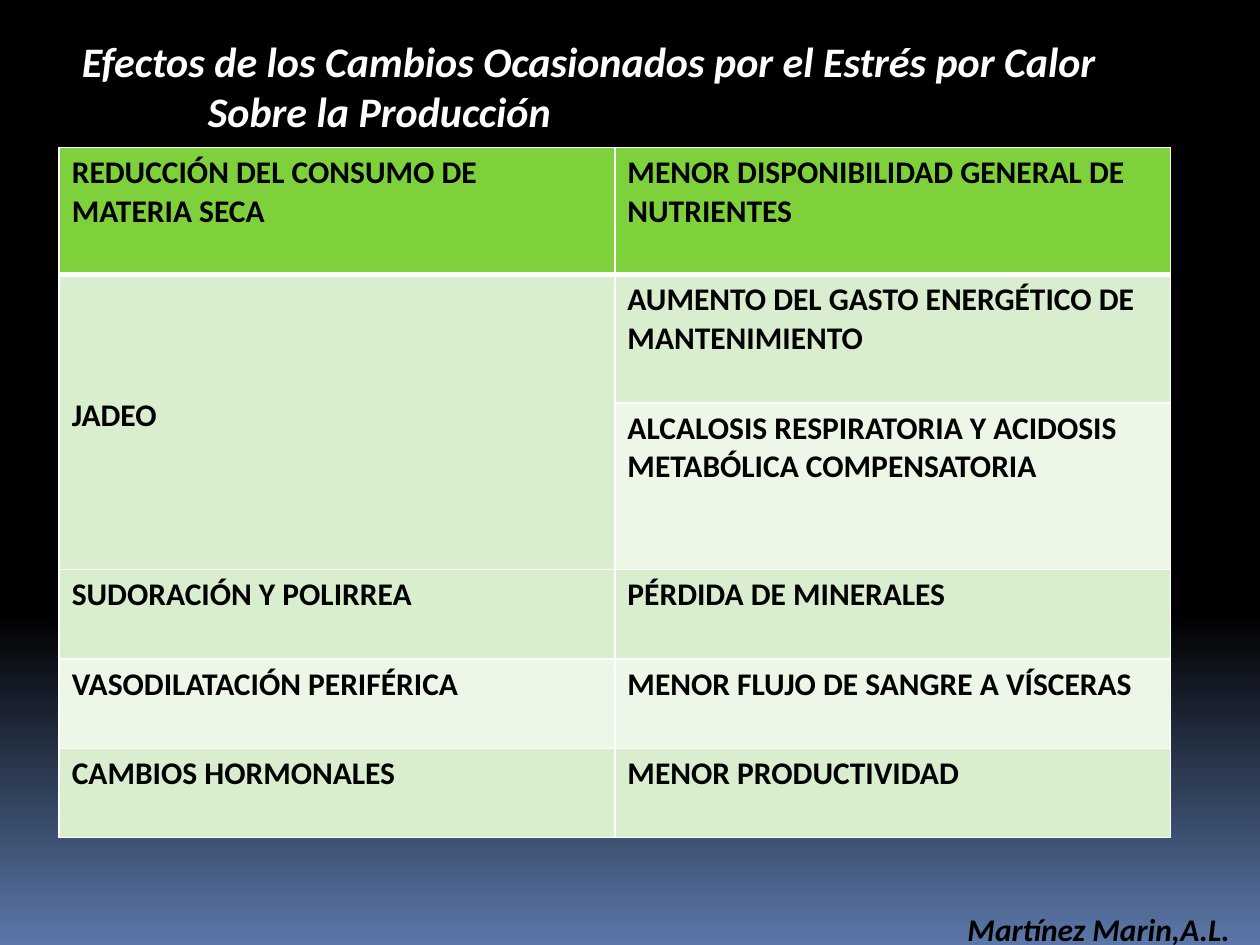
"""Build a slide with a table of heat stress effects on production."""
from copy import deepcopy

from lxml.etree import SubElement
from pptx import Presentation
from pptx.dml.color import RGBColor
from pptx.enum.text import MSO_ANCHOR, MSO_AUTO_SIZE, PP_ALIGN
from pptx.oxml.ns import qn
from pptx.util import Inches, Pt

BLACK = RGBColor(0x00, 0x00, 0x00)
WHITE = RGBColor(0xFF, 0xFF, 0xFF)
BLUE = RGBColor(0x5B, 0x77, 0xA8)
GREEN = RGBColor(0x7F, 0xD1, 0x3B)
LIGHT_GREEN = RGBColor(0xD8, 0xEE, 0xCE)
PALE_GREEN = RGBColor(0xEC, 0xF7, 0xE8)

ROWS = [
    (1.01, GREEN, "REDUCCIÓN DEL CONSUMO DE MATERIA SECA",
     "MENOR DISPONIBILIDAD GENERAL DE NUTRIENTES"),
    (1.02, LIGHT_GREEN, "JADEO", "AUMENTO DEL GASTO ENERGÉTICO DE MANTENIMIENTO"),
    (1.32, PALE_GREEN, "", "ALCALOSIS RESPIRATORIA Y ACIDOSIS METABÓLICA COMPENSATORIA"),
    (0.71, LIGHT_GREEN, "SUDORACIÓN Y POLIRREA", "PÉRDIDA DE MINERALES"),
    (0.71, PALE_GREEN, "VASODILATACIÓN PERIFÉRICA", "MENOR FLUJO DE SANGRE A VÍSCERAS"),
    (0.71, LIGHT_GREEN, "CAMBIOS HORMONALES", "MENOR PRODUCTIVIDAD"),
]


def format_text(paragraph, size, color, italic=False):
    values = {"name": "Calibri", "size": Pt(size), "bold": True, "italic": italic}
    for name, value in values.items():
        setattr(paragraph.font, name, value)
    paragraph.font.color.rgb = color


def set_borders(cell, bottom_width):
    properties = cell._tc.get_or_add_tcPr()
    widths = {"a:lnL": 1, "a:lnR": 1, "a:lnT": 1, "a:lnB": bottom_width}
    for position, (tag, width) in enumerate(widths.items()):
        line = SubElement(properties, qn(tag), w=str(Pt(width)))
        fill = SubElement(line, qn("a:solidFill"))
        SubElement(fill, qn("a:srgbClr"), val=str(WHITE))
        properties.insert(position, line)


presentation = Presentation()
presentation.slide_width = Inches(10)
presentation.slide_height = Inches(7.5)
slide = presentation.slides.add_slide(presentation.slide_layouts[5])

background = slide.background.fill
background.gradient()
background.gradient_angle = 270
stop_list = slide._element.find(".//" + qn("a:gsLst"))
stop_list.insert(1, deepcopy(stop_list[0]))
for stop, position, color in zip(background.gradient_stops, (0, 0.65, 1), (BLACK, BLACK, BLUE)):
    stop.position = position
    stop.color.rgb = color

table_shape = slide.shapes.add_table(
    len(ROWS), 2, Inches(0.47), Inches(1.17), Inches(8.83), Inches(5.48))
table = table_shape.table
for column in table.columns:
    column.width = Inches(4.41)
for row_index, (height, color, *texts) in enumerate(ROWS):
    table.rows[row_index].height = Inches(height)
    for column_index, text in enumerate(texts):
        cell = table.cell(row_index, column_index)
        cell.fill.solid()
        cell.fill.fore_color.rgb = color
        set_borders(cell, 3 if row_index == 0 else 1)
        cell.text = text
        format_text(cell.text_frame.paragraphs[0], 18, BLACK)
panting_cell = table.cell(1, 0)
panting_cell.merge(table.cell(2, 0))
panting_cell.margin_top = Inches(0.97)

title = slide.shapes.title
title_placement = {"left": 0.55, "top": 0.23, "width": 8.98, "height": 0.91}
for name, value in title_placement.items():
    setattr(title, name, Inches(value))
title.text_frame.text = "Efectos de los Cambios Ocasionados por el Estrés por Calor\vSobre la Producción"
title.text_frame.vertical_anchor = MSO_ANCHOR.TOP
title.text_frame.auto_size = MSO_AUTO_SIZE.NONE
title_paragraph = title.text_frame.paragraphs[0]
title_paragraph.alignment = PP_ALIGN.LEFT
title_paragraph_properties = title_paragraph._p.get_or_add_pPr()
title_paragraph_properties.set("marL", str(Inches(1)))
title_paragraph_properties.set("indent", str(Inches(-1)))
format_text(title_paragraph, 24, WHITE, italic=True)

author = slide.shapes.add_textbox(Inches(7.58), Inches(7.17), Inches(2.42), Inches(0.4))
author.text_frame.text = "Martínez Marin,A.L."
author.text_frame.word_wrap = False
format_text(author.text_frame.paragraphs[0], 18, BLACK, italic=True)

presentation.save("out.pptx")
